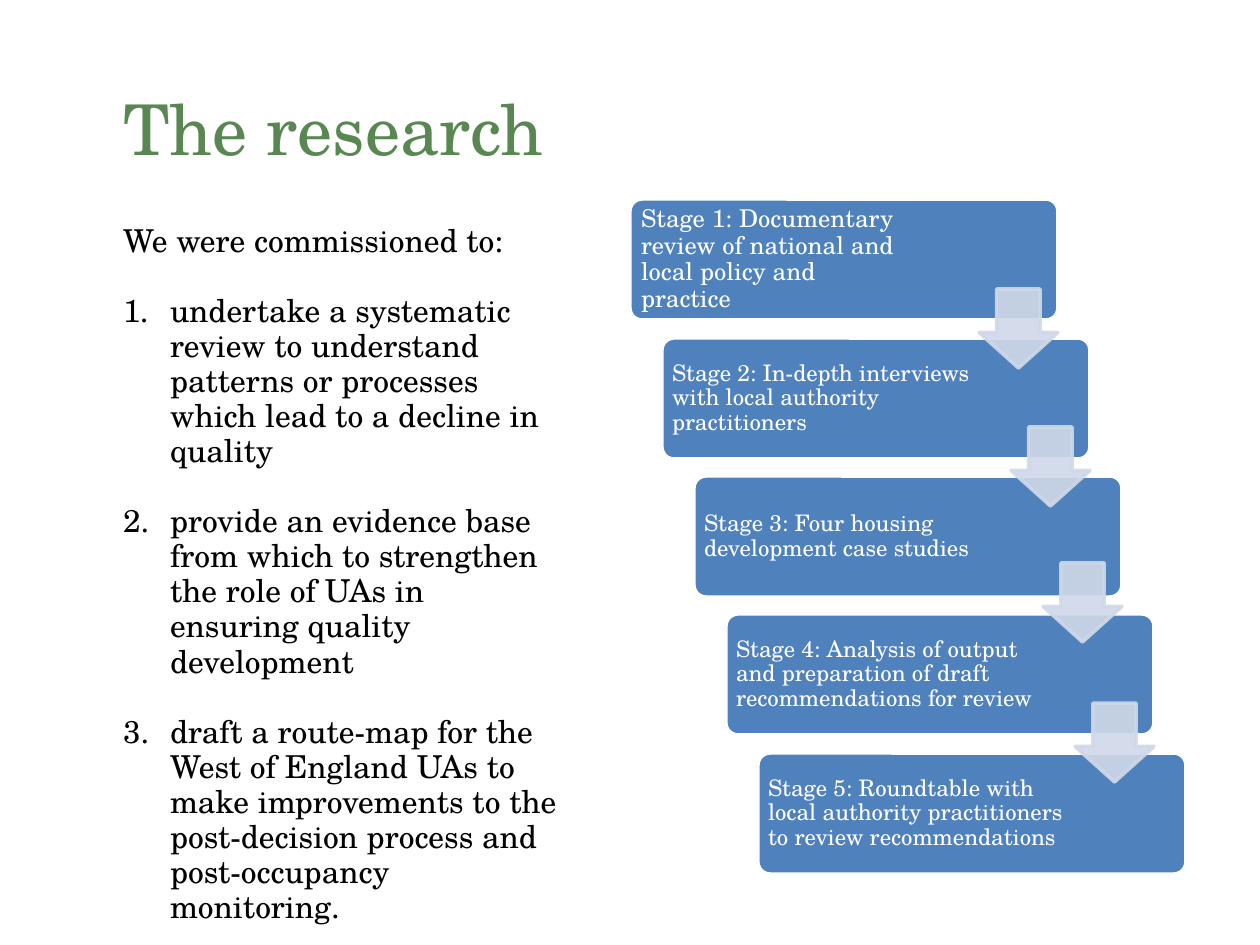
from lxml import etree
from pptx import Presentation, util as u
from pptx.dml.color import RGBColor
from pptx.enum import shapes, text
from pptx.oxml.ns import qn

PX = 914400 / 126
FONT = "TeX Gyre Schola"
BLACK, WHITE, GREEN = "000000", "FFFFFF", "598752"
BLUE, PALE_BLUE = "4F81BD", "D0D8E8"

INTRO = "We were commissioned to:"
TASKS = [
    "undertake a systematic review to understand patterns or processes "
    "which lead to a decline in quality",
    "provide an evidence base from which to strengthen the role of UAs "
    "in ensuring quality development",
    "draft a route-map for the West of England UAs to make improvements "
    "to the post-decision process and post-occupancy monitoring.",
]
STAGES = [
    "Stage 1: Documentary review of national and local policy and practice",
    "Stage 2: In-depth interviews with local authority practitioners",
    "Stage 3: Four housing development case studies",
    "Stage 4: Analysis of output and preparation of draft recommendations for review",
    "Stage 5: Roundtable with local authority practitioners to review recommendations",
]
STAGE_LEFT, STAGE_TOP = 630, 199
STEP_X, STEP_Y = 32, 138.5
ARROW_LEFT = 979
ARROW_TOPS = [289, 427, 563, 703]


def px(*lengths):
    return [u.Emu(round(length * PX)) for length in lengths]


def color(hex_code):
    return RGBColor.from_string(hex_code)


def add_text_box(slide, box, inset=0, anchor=text.MSO_ANCHOR.TOP):
    frame = slide.shapes.add_textbox(*px(*box)).text_frame
    frame.word_wrap = True
    frame.vertical_anchor = anchor
    margin, = px(inset)
    frame.margin_left = frame.margin_right = margin
    frame.margin_top = frame.margin_bottom = margin
    return frame


def write(paragraph, wording, size, hex_code, spacing):
    paragraph.text = wording
    paragraph.line_spacing = spacing
    for run in paragraph.runs:
        run.font.name = FONT
        run.font.size = u.Pt(size)
        run.font.color.rgb = color(hex_code)


def number(paragraph, hang):
    properties = paragraph._p.get_or_add_pPr()
    indent, = px(hang)
    properties.set("marL", str(indent))
    properties.set("indent", str(-indent))
    etree.SubElement(properties, qn("a:buFont"), typeface="+mj-lt")
    etree.SubElement(properties, qn("a:buAutoNum"), type="arabicPeriod")


def add_block(slide, preset, box, adjustments, fill, line):
    block = slide.shapes.add_shape(preset, *px(*box))
    block.shadow.inherit = False
    for index, value in enumerate(adjustments):
        block.adjustments[index] = value
    block.fill.solid()
    block.fill.fore_color.rgb = color(fill)
    block.line.color.rgb = color(line)
    block.line.width = u.Pt(2)
    return block


def make_translucent(block, percent):
    """Set the opacity of the fill and the line."""
    for tone in block._element.spPr.iter(qn("a:srgbClr")):
        etree.SubElement(tone, qn("a:alpha"), val=str(percent * 1000))


def add_tasks(slide):
    frame = add_text_box(slide, (123, 224, 436, 625))
    write(frame.paragraphs[0], INTRO, 18, BLACK, u.Pt(20))
    for task in TASKS:
        paragraph = frame.add_paragraph()
        number(paragraph, 47)
        write(paragraph, task, 18, BLACK, u.Pt(20))
        paragraph.space_before = u.Pt(20)


def add_stage(slide, index, wording):
    left, top = STAGE_LEFT + index * STEP_X, round(STAGE_TOP + index * STEP_Y)
    add_block(slide, shapes.MSO_SHAPE.ROUNDED_RECTANGLE,
              (left, top, 428, 121), [0.1], BLUE, WHITE)
    width, inset, size = (282, 7, 14) if index == 0 else (310, 6, 13)
    frame = add_text_box(slide, (left + 4, top + 3, width, 115), inset,
                         text.MSO_ANCHOR.MIDDLE)
    write(frame.paragraphs[0], wording, size, WHITE, 0.9)


def add_arrow(slide, index, top):
    arrow = add_block(slide, shapes.MSO_SHAPE.DOWN_ARROW,
                      (ARROW_LEFT + index * STEP_X, top, 79, 79),
                      [0.45, 0.55], PALE_BLUE, PALE_BLUE)
    # The first adjustment is the head length, the second the shaft width.
    arrow.adjustments[0], arrow.adjustments[1] = 0.55, 0.45
    make_translucent(arrow, 90)


def main():
    deck = Presentation()
    deck.slide_width, deck.slide_height = px(1260, 945)
    slide = deck.slides.add_slide(deck.slide_layouts[6])
    add_tasks(slide)
    title = add_text_box(slide, (123, 96, 898, 89))
    write(title.paragraphs[0], "The research", 40, GREEN, u.Pt(42))
    for index, wording in enumerate(STAGES):
        add_stage(slide, index, wording)
    for index, top in enumerate(ARROW_TOPS):
        add_arrow(slide, index, top)
    deck.save("out.pptx")


if __name__ == "__main__":
    main()
